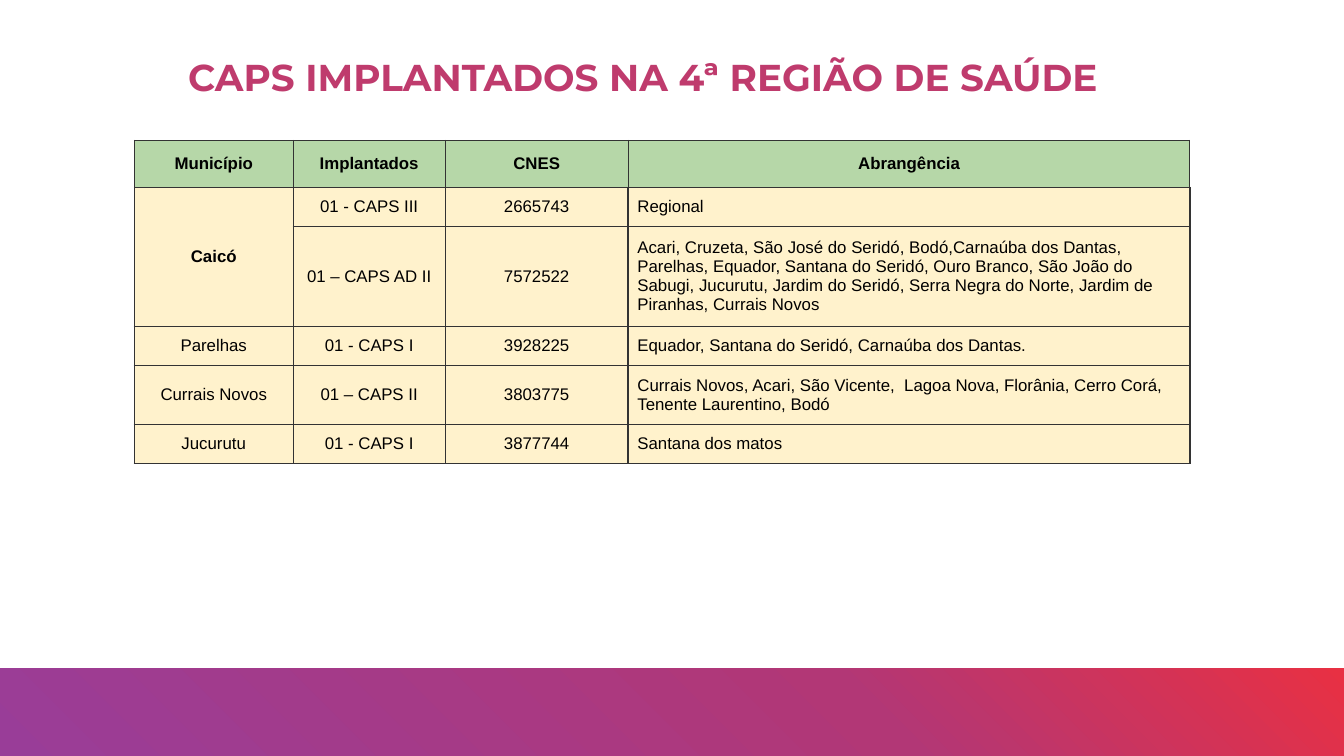
from copy import deepcopy
from dataclasses import dataclass

from lxml import etree
from pptx import Presentation
from pptx.dml.color import RGBColor
from pptx.enum.shapes import MSO_SHAPE
from pptx.enum.text import MSO_ANCHOR, MSO_AUTO_SIZE, PP_ALIGN
from pptx.oxml.ns import qn
from pptx.util import Pt

RECT = MSO_SHAPE.RECTANGLE
MIDDLE = MSO_ANCHOR.MIDDLE
NO_FIT = MSO_AUTO_SIZE.NONE
LEFT, CENTER = PP_ALIGN.LEFT, PP_ALIGN.CENTER


@dataclass(frozen=True)
class Theme:
    title: str = "BF3B6D"
    text: str = "000000"
    header: str = "B6D7A8"
    body: str = "FFF2CC"
    border: str = "333333"
    band: tuple = ((0, "993D98"), (0.64, "B23776"), (1, "E83043"))
    title_font: str = "Montserrat"
    table_font: str = "Arial"
    title_size: int = 20
    table_size: int = 9


theme = Theme()


def write(tf, text, *, font, size, color, bold=False, align=CENTER, spacing=None):
    tf.word_wrap = True
    p = tf.paragraphs[0]
    p.alignment = align
    if spacing:
        p.line_spacing = spacing
    r = p.add_run()
    r.text = text
    r.font.name = font
    r.font.size = Pt(size)
    r.font.bold = bold
    r.font.color.rgb = RGBColor.from_string(color)


def set_borders(cell, **widths):
    tcPr = cell._tc.get_or_add_tcPr()
    for side in "LRTB":
        ln = etree.SubElement(tcPr, qn(f"a:ln{side}"), w=str(Pt(widths[side])))
        fill = etree.SubElement(ln, qn("a:solidFill"))
        etree.SubElement(fill, qn("a:srgbClr"), val=theme.border)


prs = Presentation()
prs.slide_width, prs.slide_height = Pt(720), Pt(405)
s = prs.slides.add_slide(prs.slide_layouts[5])

sp = s.shapes.add_shape(RECT, Pt(-0.5), Pt(358), Pt(720.5), Pt(47))
sp.shadow.inherit = False
sp.line.fill.background()
sp.fill.gradient()
sp.fill.gradient_angle = 45
stops = sp._element.spPr.find(".//" + qn("a:gsLst"))
stops.append(deepcopy(stops[0]))
for stop, (position, color) in zip(sp.fill.gradient_stops, theme.band):
    stop.position = position
    stop.color.rgb = RGBColor.from_string(color)

title = s.shapes.title
title.left, title.top, title.width, title.height = Pt(21.5), Pt(19.5), Pt(646), Pt(24.5)
tf = title.text_frame
tf.auto_size = NO_FIT
tf.vertical_anchor = MIDDLE
tf.margin_left = tf.margin_right = tf.margin_top = tf.margin_bottom = 0
write(tf, "CAPS IMPLANTADOS NA 4ª REGIÃO DE SAÚDE", font=theme.title_font,
      size=theme.title_size, color=theme.title, bold=True, spacing=1.75)

rows = [
    ("Município", "Implantados", "CNES", "Abrangência"),
    ("Caicó", "01 - CAPS III", "2665743", "Regional"),
    ("", "01 – CAPS AD II", "7572522",
     "Acari, Cruzeta, São José do Seridó, Bodó,Carnaúba dos Dantas, Parelhas, "
     "Equador, Santana do Seridó, Ouro Branco, São João do Sabugi, Jucurutu, "
     "Jardim do Seridó, Serra Negra do Norte, Jardim de Piranhas, Currais Novos"),
    ("Parelhas", "01 - CAPS I", "3928225",
     "Equador, Santana do Seridó, Carnaúba dos Dantas."),
    ("Currais Novos", "01 – CAPS II", "3803775",
     "Currais Novos, Acari, São Vicente,  Lagoa Nova, Florânia, Cerro Corá, "
     "Tenente Laurentino, Bodó"),
    ("Jucurutu", "01 - CAPS I", "3877744", "Santana dos matos"),
]
widths = [85, 81.5, 98, 301]
heights = [25.2, 20.9, 53.6, 20.9, 31.6, 20.9]

table = s.shapes.add_table(len(rows), len(widths), Pt(72), Pt(75.2),
                           Pt(sum(widths)), Pt(sum(heights))).table
table.first_row = table.horz_banding = False
for column, width in zip(table.columns, widths):
    column.width = Pt(width)
for row, height in zip(table.rows, heights):
    row.height = Pt(height)
table.cell(1, 0).merge(table.cell(2, 0))

for i, row in enumerate(rows):
    header = i == 0
    for j, text in enumerate(row):
        cell = table.cell(i, j)
        cell.vertical_anchor = MIDDLE
        cell.margin_left = cell.margin_right = Pt(5)
        cell.margin_top = cell.margin_bottom = Pt(5)
        set_borders(cell,
                    L=1 if not header and j in (0, 3) else 0.5,
                    R=1 if not header and j >= 2 else 0.5,
                    T=1 if i > 1 else 0.5,
                    B=0.5 if header else 1)
        cell.fill.solid()
        cell.fill.fore_color.rgb = RGBColor.from_string(theme.header if header else theme.body)
        if text:
            write(cell.text_frame, text, font=theme.table_font, size=theme.table_size,
                  color=theme.text, bold=header or text == "Caicó",
                  align=LEFT if j == 3 and not header else CENTER)

prs.save("out.pptx")
